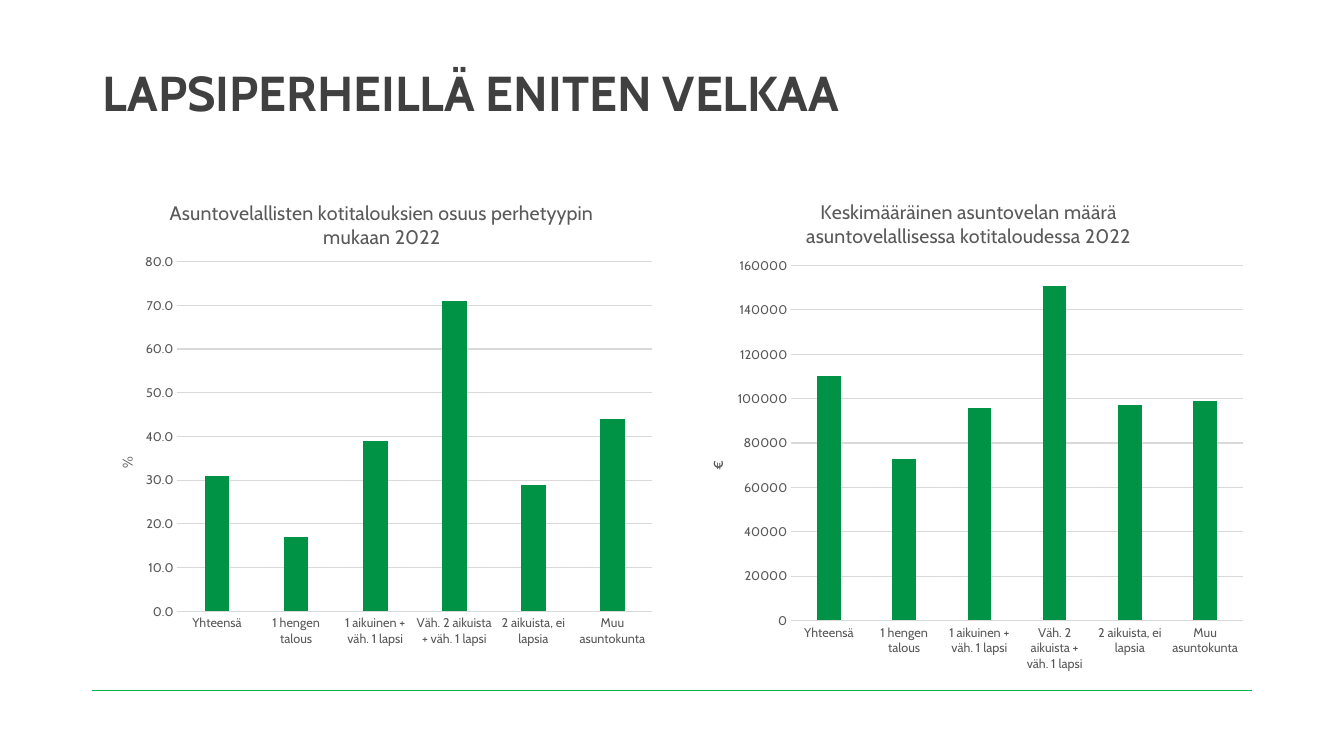
from lxml import etree
from pptx import Presentation
from pptx.chart.data import CategoryChartData
from pptx.dml.color import RGBColor
from pptx.enum.chart import XL_CHART_TYPE, XL_TICK_MARK
from pptx.enum.shapes import MSO_CONNECTOR
from pptx.enum.text import MSO_ANCHOR, PP_ALIGN
from pptx.oxml.ns import qn
from pptx.util import Inches, Pt

COLUMNS = XL_CHART_TYPE.COLUMN_CLUSTERED
NO_TICK = XL_TICK_MARK.NONE
STRAIGHT = MSO_CONNECTOR.STRAIGHT
MIDDLE = MSO_ANCHOR.MIDDLE
LEFT = PP_ALIGN.LEFT

FONT = "Cabin"
DARK = RGBColor(0x40, 0x40, 0x40)
GREY = RGBColor(0x59, 0x59, 0x59)
GRID = RGBColor(0xD9, 0xD9, 0xD9)
BLACK = RGBColor(0, 0, 0)
BAR_GREEN = RGBColor(0x00, 0x93, 0x46)
RULE_GREEN = RGBColor(0x00, 0xB0, 0x50)

HOUSEHOLDS = [
    "Yhteensä",
    "1 hengen talous",
    "1 aikuinen + väh. 1 lapsi",
    "Väh. 2 aikuista + väh. 1 lapsi",
    "2 aikuista, ei lapsia",
    "Muu asuntokunta",
]


def style_font(font, size, color, bold=False):
    font.name = FONT
    font.size = Pt(size)
    font.color.rgb = color
    font.bold = bold


def write(text_frame, text, size, color, bold=False):
    paragraph = text_frame.paragraphs[0]
    run = paragraph.add_run()
    run.text = text
    style_font(run.font, size, color, bold)
    return paragraph


def place(element, index, **fractions):
    layout = element.find(qn("c:layout"))
    if layout is None:
        layout = etree.Element(qn("c:layout"))
        element.insert(index, layout)
    manual = etree.SubElement(layout, qn("c:manualLayout"))
    if "w" in fractions:
        etree.SubElement(manual, qn("c:layoutTarget")).set("val", "inner")
    for mode in ("xMode", "yMode"):
        etree.SubElement(manual, qn("c:" + mode)).set("val", "edge")
    for key, value in fractions.items():
        etree.SubElement(manual, qn("c:" + key)).set("val", str(value))


def add_heading(slide, text):
    heading = slide.shapes.title
    heading.left, heading.top = Inches(0.92), Inches(0.4)
    heading.width, heading.height = Inches(11.5), Inches(1.09)
    heading.text_frame.vertical_anchor = MIDDLE
    paragraph = write(heading.text_frame, text, 35, DARK, True)
    paragraph.alignment = LEFT
    paragraph.line_spacing = 0.9


def add_bottom_rule(slide):
    rule = slide.shapes.add_connector(
        STRAIGHT, Inches(0.91), Inches(6.85), Inches(12.42), Inches(6.85))
    rule.line.color.rgb = RULE_GREEN
    rule.line.width = Pt(1)
    etree.SubElement(rule._element.spPr, qn("a:effectLst"))


def style_axis(axis):
    axis.major_tick_mark = NO_TICK
    axis.minor_tick_mark = NO_TICK
    style_font(axis.tick_labels.font, 9, GREY)


def style_line(line):
    line.color.rgb = GRID
    line.width = Pt(0.75)


def add_debt_chart(slide, left, top, title, unit, number_format, maximum, step,
                   values, title_x, unit_y, plot):
    data = CategoryChartData(number_format=number_format)
    data.categories = HOUSEHOLDS
    data.add_series("Series 1", values)
    chart = slide.shapes.add_chart(
        COLUMNS, Inches(left), Inches(top), Inches(5.67), Inches(5.03), data).chart
    style_font(chart.font, 10, BLACK)
    chart.has_legend = False

    chart.has_title = True
    write(chart.chart_title.text_frame, title, 14, GREY)
    place(chart.chart_title._element, 1, x=title_x, y=0.04)

    households = chart.category_axis
    style_axis(households)
    style_line(households.format.line)

    amounts = chart.value_axis
    style_axis(amounts)
    amounts.minimum_scale, amounts.maximum_scale = 0, maximum
    amounts.major_unit = step
    amounts.tick_labels.number_format = number_format
    amounts.tick_labels.number_format_is_linked = False
    amounts.format.line.fill.background()
    style_line(amounts.major_gridlines.format.line)
    amounts.has_title = True
    write(amounts.axis_title.text_frame, unit, 10, GREY)
    place(amounts.axis_title._element, 1, x=0.04, y=unit_y)

    bars = chart.plots[0]
    bars.gap_width, bars.overlap = 219, -27
    bars.vary_by_categories = False
    fill = bars.series[0].format.fill
    fill.solid()
    fill.fore_color.rgb = BAR_GREEN
    place(chart._chartSpace.chart.plotArea, 0, **plot)


def main():
    presentation = Presentation()
    presentation.slide_width = Inches(13.33)
    presentation.slide_height = Inches(7.5)
    slide = presentation.slides.add_slide(presentation.slide_layouts[5])
    add_bottom_rule(slide)
    add_heading(slide, "LAPSIPERHEILLÄ ENITEN VELKAA")
    add_debt_chart(
        slide, 0.91, 1.74,
        "Asuntovelallisten kotitalouksien osuus perhetyypin mukaan 2022",
        "%", "0.0", 80, 10, [31, 17, 39, 71, 29, 44],
        0.13, 0.55, {"x": 0.15, "y": 0.17, "w": 0.83, "h": 0.69})
    add_debt_chart(
        slide, 6.77, 1.73,
        "Keskimääräinen asuntovelan määrä asuntovelallisessa kotitaloudessa 2022",
        "€", "0", 160000, 20000, [110000, 73000, 96000, 151000, 97000, 99000],
        0.21, 0.56, {"x": 0.19, "y": 0.18, "w": 0.79, "h": 0.7})
    presentation.save("out.pptx")


if __name__ == "__main__":
    main()
